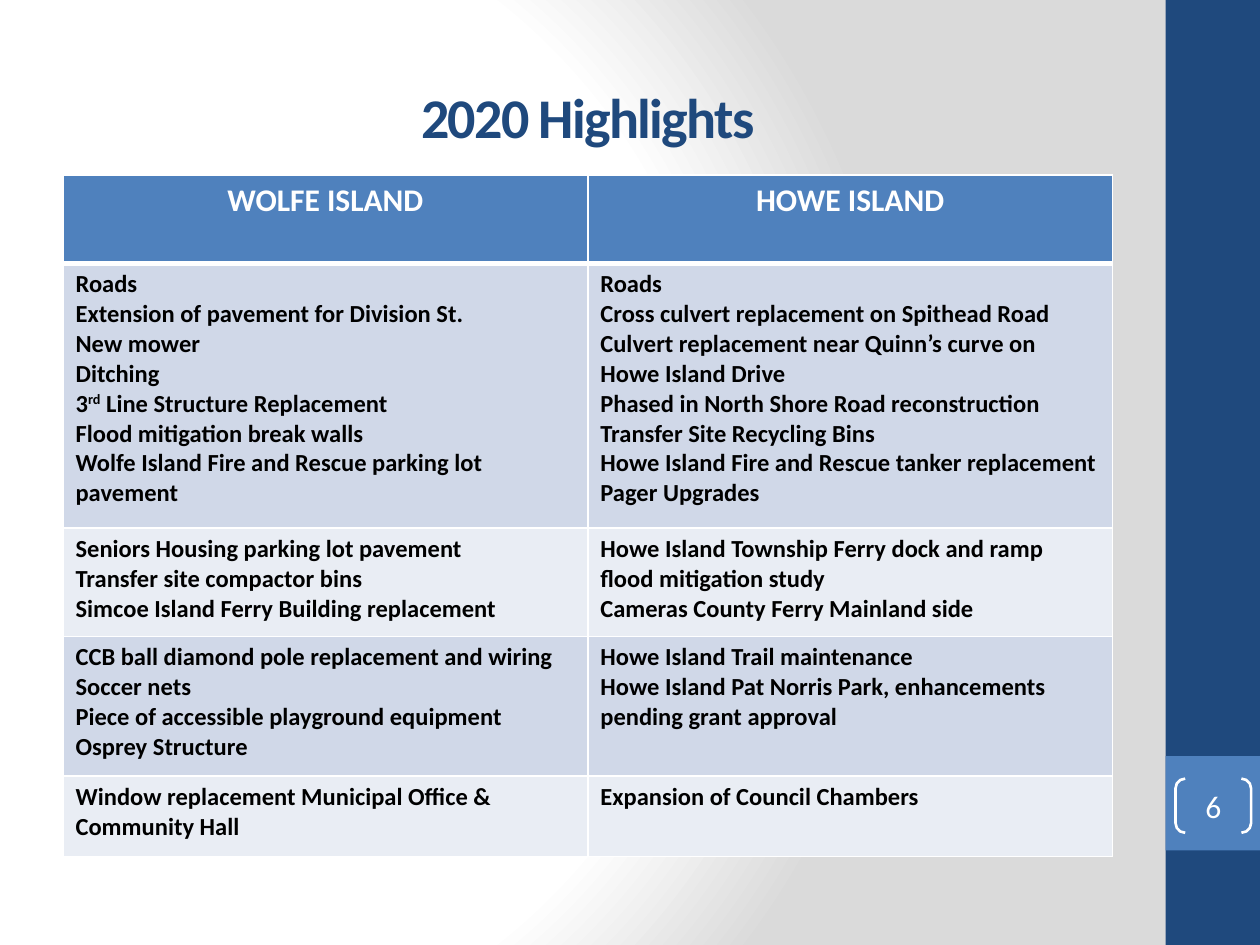
from pptx import Presentation
from pptx import util as u
from pptx.dml.color import RGBColor
from pptx.enum import shapes, text
from pptx.oxml import parse_xml
from pptx.oxml.ns import nsdecls, qn

COLOURS = {
    "navy": "1F497D", "blue": "4F81BD", "band": "D0D8E8", "light": "E9EDF4",
    "white": "FFFFFF", "grey": "DADADA", "black": "000000",
}
HEADINGS = ["WOLFE ISLAND", "HOWE ISLAND"]
# Each row holds the Wolfe Island list and the Howe Island list; ^ marks superscript.
HIGHLIGHTS = [
    (["Roads", "Extension of pavement for Division St.", "New mower", "Ditching",
      "3^rd^ Line Structure Replacement", "Flood mitigation break walls",
      "Wolfe Island Fire and Rescue parking lot pavement"],
     ["Roads", "Cross culvert replacement on Spithead Road",
      "Culvert replacement near Quinn’s curve on Howe Island Drive",
      "Phased in North Shore Road reconstruction", "Transfer Site Recycling Bins",
      "Howe Island Fire and Rescue tanker replacement", "Pager Upgrades"]),
    (["Seniors Housing parking lot pavement", "Transfer site compactor bins",
      "Simcoe Island Ferry Building replacement"],
     ["Howe Island Township Ferry dock and ramp flood mitigation study",
      "Cameras County Ferry Mainland side"]),
    (["CCB ball diamond pole replacement and wiring", "Soccer nets",
      "Piece of accessible playground equipment", "Osprey Structure"],
     ["Howe Island Trail maintenance",
      "Howe Island Pat Norris Park, enhancements pending grant approval"]),
    (["Window replacement Municipal Office & Community Hall"],
     ["Expansion of Council Chambers"]),
]
ROW_HEIGHTS = [0.7, 2.1, 0.86, 1.11, 0.64]


def colour(name):
    return RGBColor.from_string(COLOURS[name])


def write_text(frame, lines, size=14, color="black", bold=False, align=None, spacing=None):
    """Write one paragraph per line; text between ^ marks is superscript."""
    for index, line in enumerate(lines):
        paragraph = frame.paragraphs[0] if index == 0 else frame.add_paragraph()
        paragraph.alignment = align
        for part, words in enumerate(line.split("^")):
            run = paragraph.add_run()
            run.text = words
            font = run.font
            font.name, font.size, font.bold = "Calibri", u.Pt(size), bold
            font.color.rgb = colour(color)
            properties = run._r.get_or_add_rPr()
            if part % 2:
                properties.set("baseline", "30000")
            if spacing is not None:
                properties.set("spc", str(spacing))


def paint_background(slide):
    """Circular gradient, white at its focus and grey at the edge."""
    slide.background.fill.gradient()
    old = slide.background._cSld.bg.bgPr.find(qn("a:gradFill"))
    stops = "".join(
        f'<a:gs pos="{position * 1000}"><a:srgbClr val="{COLOURS[name]}"/></a:gs>'
        for position, name in ((0, "white"), (75, "white"), (100, "grey")))
    gradient = parse_xml(
        f'<a:gradFill {nsdecls("a")} rotWithShape="1"><a:gsLst>{stops}</a:gsLst>'
        '<a:path path="circle"><a:fillToRect l="20000" t="50000" r="100000" b="50000"/>'
        '</a:path></a:gradFill>')
    old.getparent().replace(old, gradient)


def add_block(slide, kind, left, top, width, height, fill=None):
    shape = slide.shapes.add_shape(
        kind, u.Inches(left), u.Inches(top), u.Inches(width), u.Inches(height))
    shape.shadow.inherit = False
    shape.line.fill.background()
    if fill:
        shape.fill.solid()
        shape.fill.fore_color.rgb = colour(fill)
    else:
        shape.fill.background()
    return shape


def add_side_band(slide, left, width, height, number):
    """Full-height band with a square that holds the bracketed page number."""
    square_top = 0.8 * height
    rectangle = shapes.MSO_SHAPE.RECTANGLE
    add_block(slide, rectangle, left, 0, width, height, "navy")
    add_block(slide, rectangle, left, square_top, width, width, "blue")
    brackets = add_block(slide, shapes.MSO_SHAPE.DOUBLE_BRACKET,
                         left + 0.08, square_top + 0.18, 0.8 * width, 0.43)
    brackets.adjustments[0] = 0.179
    brackets.line.color.rgb = colour("white")
    brackets.line.width = u.Pt(1.5)
    frame = brackets.text_frame
    frame.margin_left = frame.margin_right = frame.margin_top = frame.margin_bottom = 0
    frame.vertical_anchor = text.MSO_ANCHOR.MIDDLE
    write_text(frame, [number], size=18, color="white", align=text.PP_ALIGN.CENTER)


def place_title(slide, words, left, top, width, height):
    title = slide.shapes.title
    title.left, title.top = u.Inches(left), u.Inches(top)
    title.width, title.height = u.Inches(width), u.Inches(height)
    title.text_frame.vertical_anchor = text.MSO_ANCHOR.MIDDLE
    write_text(title.text_frame, [words], size=32, color="navy", bold=True,
               align=text.PP_ALIGN.CENTER, spacing=-100)


def set_borders(cell, **widths):
    """Give the cell white borders; widths in points override 1 for L, R, T or B."""
    properties = cell._tc.get_or_add_tcPr()
    for index, side in enumerate("LRTB"):
        width = u.Pt(widths.get(side, 1))
        properties.insert(index, parse_xml(
            f'<a:ln{side} {nsdecls("a")} w="{width}"><a:solidFill>'
            f'<a:srgbClr val="{COLOURS["white"]}"/></a:solidFill></a:ln{side}>'))


def add_highlights_table(slide, left, top, width):
    table = slide.shapes.add_table(
        len(ROW_HEIGHTS), len(HEADINGS), u.Inches(left), u.Inches(top),
        u.Inches(width), u.Inches(sum(ROW_HEIGHTS))).table
    for column in table.columns:
        column.width = u.Inches(width / len(HEADINGS))
    rows = [[[heading] for heading in HEADINGS], *HIGHLIGHTS]
    for row, (height, contents) in enumerate(zip(ROW_HEIGHTS, rows)):
        table.rows[row].height = u.Inches(height)
        for cell, lines in zip(table.rows[row].cells, contents):
            cell.fill.solid()
            if row == 0:
                fill, borders = "blue", {"B": 3}
                write_text(cell.text_frame, lines, size=18, color="white", bold=True,
                           align=text.PP_ALIGN.CENTER)
            else:
                fill = "band" if row % 2 else "light"
                borders = {"T": 3} if row == 1 else {}
                write_text(cell.text_frame, lines, bold=True)
            cell.fill.fore_color.rgb = colour(fill)
            set_borders(cell, **borders)


def main():
    presentation = Presentation()
    presentation.slide_width, presentation.slide_height = u.Inches(10), u.Inches(7.5)
    slide = presentation.slides.add_slide(presentation.slide_layouts[5])
    paint_background(slide)
    add_side_band(slide, left=9.25, width=0.75, height=7.5, number="6")
    place_title(slide, "2020 Highlights", left=0.5, top=0.3, width=8.33, height=1.25)
    add_highlights_table(slide, left=0.5, top=1.39, width=8.33)
    presentation.save("out.pptx")


if __name__ == "__main__":
    main()
